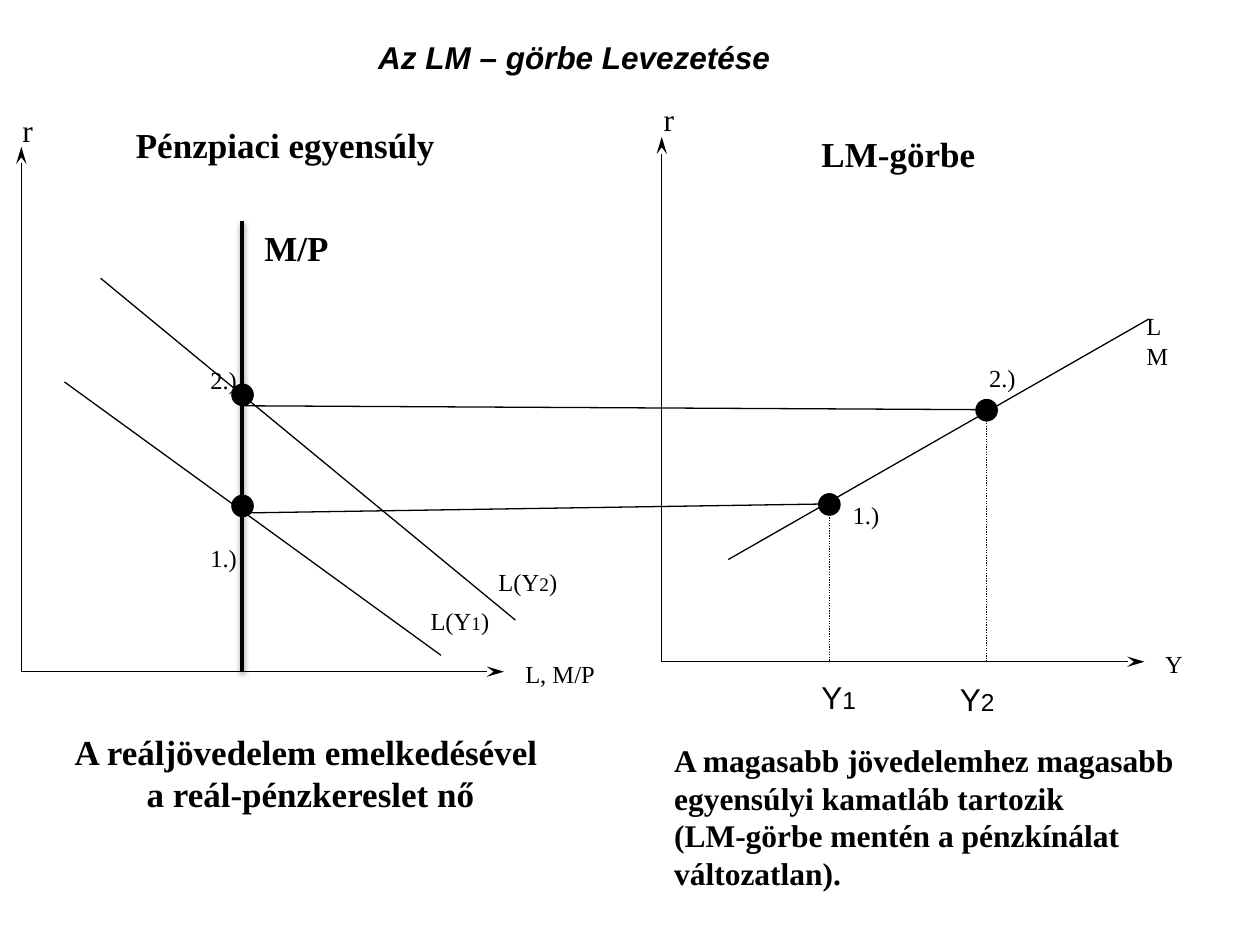
from dataclasses import dataclass

from lxml import etree
from pptx import Presentation
from pptx.dml.color import RGBColor
from pptx.enum.dml import MSO_LINE
from pptx.enum.shapes import MSO_CONNECTOR, MSO_SHAPE
from pptx.enum.text import MSO_ANCHOR, MSO_AUTO_SIZE, PP_ALIGN
from pptx.oxml.ns import qn
from pptx.util import Cm, Pt

STRAIGHT = MSO_CONNECTOR.STRAIGHT
OVAL = MSO_SHAPE.OVAL
DOTTED = MSO_LINE.ROUND_DOT  # written as sysDot
LEFT, CENTER = PP_ALIGN.LEFT, PP_ALIGN.CENTER
TOP = MSO_ANCHOR.TOP
GROW, FIXED = MSO_AUTO_SIZE.SHAPE_TO_FIT_TEXT, MSO_AUTO_SIZE.NONE


@dataclass(frozen=True)
class Theme:
    ink: RGBColor = RGBColor(0, 0, 0)
    serif: str = "Times New Roman"
    sans: str = "Arial"
    heading: int = 20
    body: int = 18
    label: int = 14
    sub: int = 11
    thin: float = 0.75
    thick: float = 2


THEME = Theme()


def style_font(font, size, name=THEME.serif, bold=False, italic=False):
    font.size = Pt(size)
    font.name = name
    font.bold = bold
    font.italic = italic
    font.color.rgb = THEME.ink


def add_title(slide, text, x, y, w, h):
    sp = slide.shapes.title
    sp.left, sp.top, sp.width, sp.height = Cm(x), Cm(y), Cm(w), Cm(h)
    tf = sp.text_frame
    tf.text = text
    tf.word_wrap = False
    tf.auto_size = FIXED
    tf.vertical_anchor = TOP
    p = tf.paragraphs[0]
    p.alignment = LEFT
    style_font(p.runs[0].font, THEME.body, THEME.sans, bold=True, italic=True)


def add_text(slide, text, x, y, w, h, size, bold=False, align=LEFT, wrap=False):
    sp = slide.shapes.add_textbox(Cm(x), Cm(y), Cm(w), Cm(h))
    tf = sp.text_frame
    tf.word_wrap = wrap
    tf.auto_size = GROW
    tf.text = text
    for p in tf.paragraphs:
        p.alignment = align
        for r in p.runs:
            style_font(r.font, size, bold=bold)
    return sp


def add_indexed(slide, parts, x, y, w, h, size, sub_size, name):
    """Label whose second part is a small index."""
    sp = add_text(slide, parts[0], x, y, w, h, size)
    p = sp.text_frame.paragraphs[0]
    for part in parts[1:]:
        p.add_run().text = part
    for i, r in enumerate(p.runs):
        style_font(r.font, sub_size if i == 1 else size, name)


def add_line(slide, x1, y1, x2, y2, width=THEME.thin, dash=None,
             arrow=False, shadow=False):
    s = slide.shapes.add_connector(STRAIGHT, Cm(x1), Cm(y1), Cm(x2), Cm(y2))
    s.line.color.rgb = THEME.ink
    s.line.width = Pt(width)
    if dash:
        s.line.dash_style = dash
    sp_pr = s.line._get_or_add_ln().getparent()
    if arrow:
        etree.SubElement(s.line._get_or_add_ln(), qn("a:tailEnd"), type="stealth",
                         w="med", len="lg")
    effects = etree.SubElement(sp_pr, qn("a:effectLst"))
    if shadow:
        outer = etree.SubElement(effects, qn("a:outerShdw"), blurRad=str(Pt(3.1)),
                                 dist=str(Pt(1.6)), dir="5400000", rotWithShape="0")
        color = etree.SubElement(outer, qn("a:srgbClr"), val=str(THEME.ink))
        etree.SubElement(color, qn("a:alpha"), val="38000")


def add_axes(slide, x, y, width=9.73, height=10.58):
    add_line(slide, x, y, x, y - height, arrow=True)
    add_line(slide, x, y, x + width, y, arrow=True)


def add_dot(slide, x, y, d=0.43):
    s = slide.shapes.add_shape(OVAL, Cm(x - d / 2), Cm(y - d / 2), Cm(d), Cm(d))
    s.shadow.inherit = False
    s.fill.solid()
    s.fill.fore_color.rgb = THEME.ink
    s.line.color.rgb = THEME.ink
    s.line.width = Pt(THEME.thin)


def add_money_market(slide):
    add_axes(slide, 0.43, 13.54)
    add_text(slide, "r", 0.2, 2.11, 0.74, 1.02, THEME.body)
    add_text(slide, "L, M/P", 10.34, 13.16, 1.93, 0.86, THEME.label)
    add_text(slide, "Pénzpiaci egyensúly", 2.49, 2.36, 6.58, 1.12, THEME.heading, True)

    # Money supply
    add_line(slide, 4.88, 4.45, 4.88, 13.54, THEME.thick, shadow=True)
    add_text(slide, "M/P", 5.08, 4.45, 1.83, 1.12, THEME.heading, True)

    # Money demand at both incomes
    add_line(slide, 1.3, 7.7, 8.89, 13.21)
    add_line(slide, 2.03, 5.61, 10.39, 12.5)
    for index, x, y in (("1", 8.43, 12.09), ("2", 9.8, 11.3)):
        add_indexed(slide, ("L(Y", index, ")"), x, y, 1.75, 0.85,
                    THEME.label, THEME.sub, THEME.serif)

    # Equilibria
    for text, dot_y, text_y in (("1.)", 10.2, 10.82), ("2.)", 7.96, 7.24)):
        add_dot(slide, 4.89, dot_y)
        add_text(slide, text, 3.99, text_y, 1.04, 0.84, THEME.label)

    add_text(slide, "A reáljövedelem emelkedésével \na reál-pénzkereslet nő",
             1.22, 14.61, 10.08, 1.96, THEME.heading, True, CENTER)


def add_lm_curve(slide):
    base = 13.34
    add_axes(slide, 13.34, base)
    add_text(slide, "r", 13.13, 1.9, 0.97, 1.02, THEME.body, wrap=True)
    add_text(slide, "Y", 23.24, 12.95, 0.86, 0.84, THEME.label)
    add_text(slide, "LM-görbe", 16.31, 2.54, 3.63, 1.12, THEME.heading, True)

    # The curve
    add_line(slide, 14.68, 11.28, 23.16, 6.43)
    add_text(slide, "LM", 22.86, 6.15, 1.24, 0.84, THEME.label)

    # Points with their drop lines and incomes
    points = (("1", 16.72, 10.17, 16.94, 9.96, 16.31, 13.54),
              ("2", 19.89, 8.27, 19.69, 7.19, 19.1, 13.59))
    for index, x, y, text_x, text_y, income_x, income_y in points:
        add_line(slide, x, y, x, base, dash=DOTTED)
        add_dot(slide, x, y)
        add_text(slide, f"{index}.)", text_x, text_y, 1.04, 0.84, THEME.label)
        add_indexed(slide, ("Y", index), income_x, income_y, 1.2, 1.02,
                    THEME.body, THEME.label, THEME.sans)

    add_text(slide, "A magasabb jövedelemhez magasabb egyensúlyi kamatláb tartozik\n"
             "(LM-görbe mentén a pénzkínálat\nváltozatlan).",
             13.34, 14.81, 12.24, 3.33, THEME.body, True, wrap=True)


def main():
    prs = Presentation()
    prs.slide_width, prs.slide_height = Cm(25.4), Cm(19.05)
    slide = prs.slides.add_slide(prs.slide_layouts.get_by_name("Title Only"))

    add_title(slide, "Az LM – görbe Levezetése", 7.37, 0.64, 8.48, 1.02)
    add_money_market(slide)
    add_lm_curve(slide)

    # Links between the equilibria and the curve
    add_line(slide, 4.9, 8.18, 20.12, 8.26)
    add_line(slide, 4.93, 10.34, 16.59, 10.16)

    prs.save("out.pptx")


if __name__ == "__main__":
    main()
